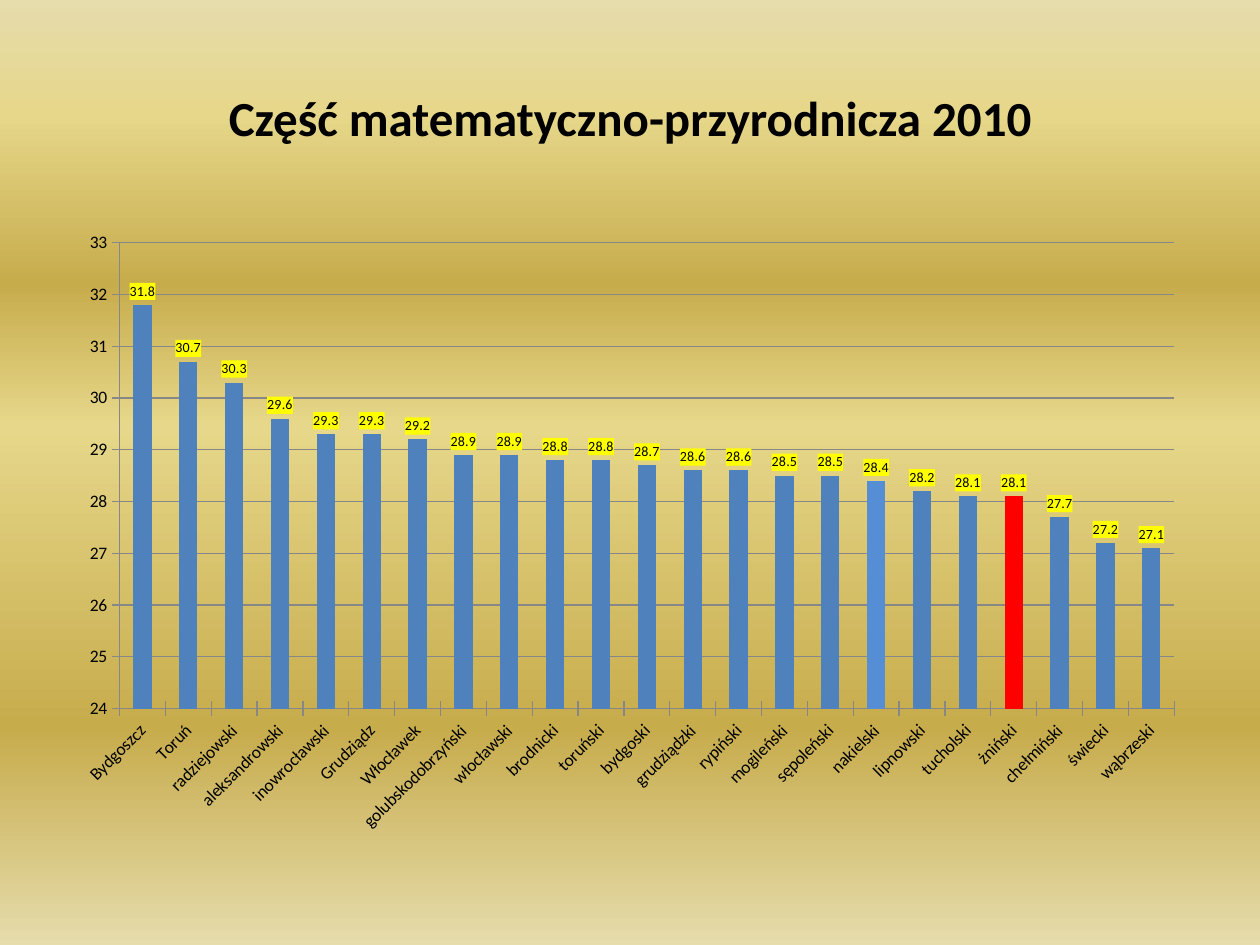
from typing import NamedTuple

from lxml.etree import SubElement
from pptx import Presentation
from pptx.chart.data import CategoryChartData
from pptx.dml.color import RGBColor
from pptx.enum.chart import XL_CHART_TYPE as ChartType, XL_LABEL_POSITION as LabelPosition
from pptx.enum.chart import XL_TICK_MARK as TickMark
from pptx.enum.text import MSO_ANCHOR, PP_ALIGN
from pptx.oxml import parse_xml
from pptx.oxml.ns import nsdecls, qn
from pptx.util import Inches, Pt

COLORS = {
    "pale": "E6DCAC", "light": "E6D78A", "gold": "C7AC4C",
    "bar": "4F81BD", "nakielski": "558ED5", "żniński": "FF0000",
    "text": "000000", "label": "FFFF00", "grid": "878787",
}
BACKGROUND_STOPS = [(0, "pale"), (12, "light"), (30, "gold"),
                    (45, "light"), (77, "gold"), (100, "pale")]
HIGHLIGHTED = ("nakielski", "żniński")


class Box(NamedTuple):
    """Left, top, width and height as shares of the slide's size."""
    left: float
    top: float
    width: float
    height: float


class County(NamedTuple):
    name: str
    score: float


TITLE_BOX = Box(0.05, 0.04, 0.9, 1 / 6)
CHART_BOX = Box(0.05, 7 / 30, 0.9, 0.66)
COUNTIES = [County(*row) for row in (
    ("Bydgoszcz", 31.8), ("Toruń", 30.7), ("radziejowski", 30.3),
    ("aleksandrowski", 29.6), ("inowrocławski", 29.3), ("Grudziądz", 29.3),
    ("Włocławek", 29.2), ("golubskodobrzyński", 28.9), ("włocławski", 28.9),
    ("brodnicki", 28.8), ("toruński", 28.8), ("bydgoski", 28.7),
    ("grudziądzki", 28.6), ("rypiński", 28.6), ("mogileński", 28.5),
    ("sępoleński", 28.5), ("nakielski", 28.4), ("lipnowski", 28.2),
    ("tucholski", 28.1), ("żniński", 28.1), ("chełmiński", 27.7),
    ("świecki", 27.2), ("wąbrzeski", 27.1),
)]


def color(name: str) -> RGBColor:
    return RGBColor.from_string(COLORS[name])


def apply(target, **values) -> None:
    for attribute, value in values.items():
        setattr(target, attribute, value)


def style_font(font, size: float, bold: bool = False) -> None:
    apply(font, name="Calibri", size=Pt(size), bold=bold)
    font.color.rgb = color("text")


def place(box: Box, prs) -> dict:
    return {"left": int(box.left * prs.slide_width),
            "top": int(box.top * prs.slide_height),
            "width": int(box.width * prs.slide_width),
            "height": int(box.height * prs.slide_height)}


def paint_background(slide) -> None:
    fill = slide.background.fill
    fill.gradient()
    # The public API cannot add stops to a gradient.
    gradient = slide.background._cSld.find(".//" + qn("a:gradFill"))
    stops = gradient.find(qn("a:gsLst"))
    for stop in list(stops):
        stops.remove(stop)
    for position, name in BACKGROUND_STOPS:
        stop = SubElement(stops, qn("a:gs"), pos=str(position * 1000))
        SubElement(stop, qn("a:srgbClr"), val=COLORS[name])
    gradient.find(qn("a:lin")).set("ang", "5400000")


def add_title(slide, prs) -> None:
    title = slide.shapes.title
    apply(title, **place(TITLE_BOX, prs))
    frame = title.text_frame
    apply(frame, text="Część matematyczno-przyrodnicza 2010",
          vertical_anchor=MSO_ANCHOR.MIDDLE, word_wrap=True)
    heading = frame.paragraphs[0]
    heading.alignment = PP_ALIGN.CENTER
    style_font(heading.runs[0].font, 28, bold=True)


def style_axes(chart) -> None:
    for axis in (chart.category_axis, chart.value_axis):
        apply(axis, major_tick_mark=TickMark.CROSS, minor_tick_mark=TickMark.NONE)
        style_font(axis.tick_labels.font, 10)
        axis.format.line.color.rgb = color("grid")
    scores = chart.value_axis
    apply(scores, minimum_scale=24, maximum_scale=33, major_unit=1,
          has_major_gridlines=True)
    scores.major_gridlines.format.line.color.rgb = color("grid")
    apply(scores.tick_labels, number_format="0", number_format_is_linked=False)


def style_labels(plot) -> None:
    plot.has_data_labels = True
    labels = plot.data_labels
    apply(labels, show_value=True, position=LabelPosition.OUTSIDE_END,
          number_format="0.0", number_format_is_linked=False)
    style_font(labels.font, 8)
    label_fill = parse_xml(
        f'<c:spPr {nsdecls("c", "a")}><a:solidFill>'
        f'<a:srgbClr val="{COLORS["label"]}"/></a:solidFill></c:spPr>')
    labels._element.find(qn("c:txPr")).addprevious(label_fill)


def add_score_chart(slide, prs) -> None:
    data = CategoryChartData(number_format="0.0")
    data.categories = [county.name for county in COUNTIES]
    data.add_series("Series 1", [county.score for county in COUNTIES])
    area = place(CHART_BOX, prs)
    chart = slide.shapes.add_chart(
        ChartType.COLUMN_CLUSTERED, area["left"], area["top"],
        area["width"], area["height"], data).chart
    apply(chart, has_legend=False, has_title=False)
    style_font(chart.font, 10)
    style_axes(chart)

    plot = chart.plots[0]
    apply(plot, gap_width=150, vary_by_categories=False)
    style_labels(plot)
    bars = plot.series[0]
    bars.format.fill.solid()
    bars.format.fill.fore_color.rgb = color("bar")
    for index, county in enumerate(COUNTIES):
        if county.name in HIGHLIGHTED:
            fill = bars.points[index].format.fill
            fill.solid()
            fill.fore_color.rgb = color(county.name)


def main() -> None:
    prs = Presentation()
    apply(prs, slide_width=Inches(10), slide_height=Inches(7.5))
    slide = prs.slides.add_slide(prs.slide_layouts[5])
    paint_background(slide)
    add_title(slide, prs)
    add_score_chart(slide, prs)
    prs.save("out.pptx")


if __name__ == "__main__":
    main()
